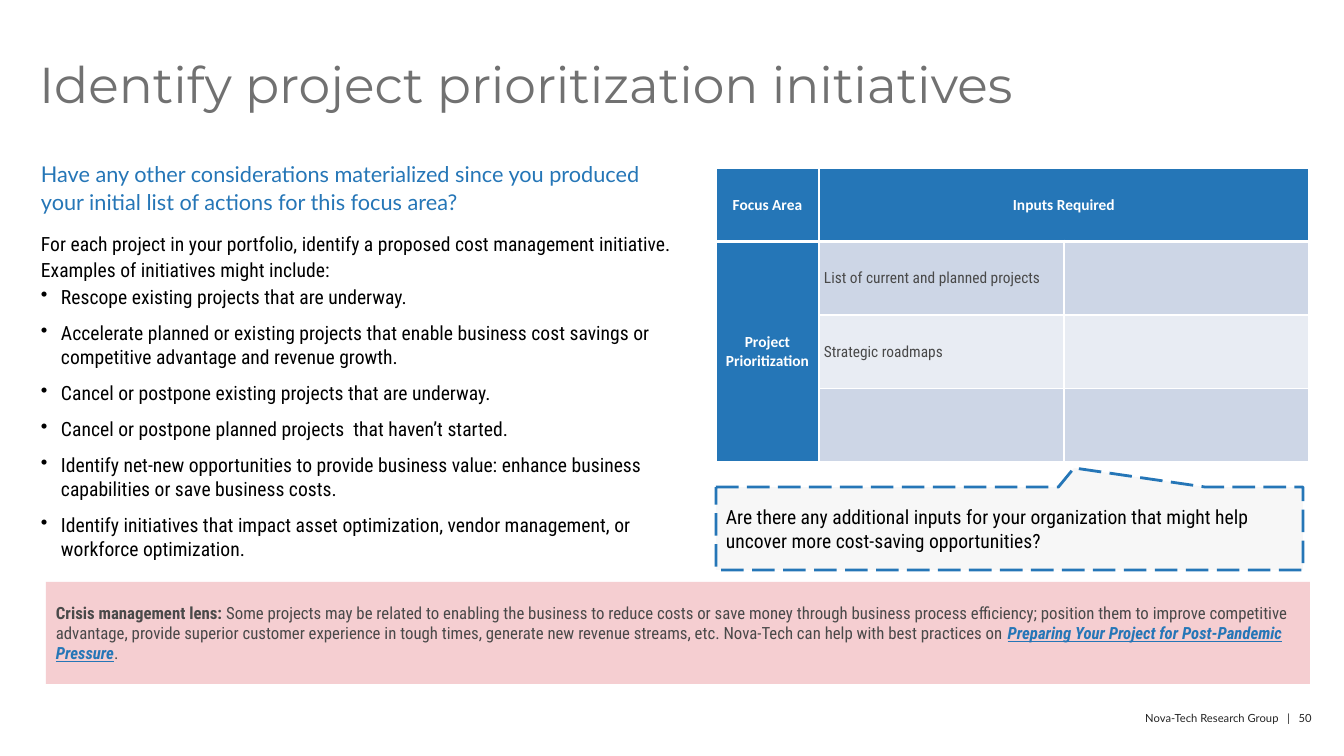
import pptx
import pptx.dml.color
import pptx.enum.dml
import pptx.enum.shapes
import pptx.enum.text
import pptx.oxml
import pptx.oxml.ns
import pptx.util

EMU_PER_PX = 914400 / 100.8
COLORS = {
    "blue": "2576B7", "title": "717171", "text": "494949", "black": "000000",
    "white": "FFFFFF", "pink": "F5CED1", "callout": "F2F2F2", "footer": "242424",
    "band": "CDD6E6", "light band": "E8ECF3",
}
ALIGN = pptx.enum.text.PP_ALIGN
MIDDLE = pptx.enum.text.MSO_ANCHOR.MIDDLE
SHAPES = pptx.enum.shapes.MSO_SHAPE

TITLE = {"name": "Montserrat", "size": 36, "color": "title"}
QUESTION = {"name": "Lato", "size": 15.5, "color": "blue"}
BODY = {"name": "Roboto Condensed", "size": 14, "color": "black"}
LENS = {"name": "Roboto Condensed", "size": 12, "color": "text"}
LENS_LABEL = {**LENS, "bold": True}
LENS_TITLE = {**LENS_LABEL, "color": "blue", "italic": True, "underline": True}
HEADER = {"name": "Calibri", "size": 11, "color": "white", "bold": True}
INPUT = {"name": "Roboto Condensed", "size": 11, "color": "text", "bold": False}
FOOTER = {"name": "Lato", "size": 8, "color": "footer"}

INITIATIVES = [
    "Rescope existing projects that are underway.",
    "Accelerate planned or existing projects that enable business cost savings or "
    "competitive advantage and revenue growth.",
    "Cancel or postpone existing projects that are underway.",
    "Cancel or postpone planned projects  that haven’t started.",
    "Identify net-new opportunities to provide business value: enhance business "
    "capabilities or save business costs.",
    "Identify initiatives that impact asset optimization, vendor management, or "
    "workforce optimization.",
]
INPUTS = ["List of current and planned projects", "Strategic roadmaps", ""]


def px(length):
    """Turn pixels into EMU."""
    return round(length * EMU_PER_PX)


def rgb(color):
    """Look up a named colour."""
    return pptx.dml.color.RGBColor.from_string(COLORS[color])


def set_values(target, values):
    """Set each attribute of the target from a dict."""
    for attribute, value in values.items():
        setattr(target, attribute, value)


def add_run(paragraph, text, style):
    """Append a run in the given style."""
    run = paragraph.add_run()
    run.text = text
    values = {**style, "size": pptx.util.Pt(style["size"])}
    run.font.color.rgb = rgb(values.pop("color"))
    set_values(run.font, values)


def add_paragraph(frame, text, style, **layout):
    """Fill the empty first paragraph, or append another one."""
    first = frame.paragraphs[0]
    paragraph = frame.add_paragraph() if first.runs else first
    set_values(paragraph, layout)
    add_run(paragraph, text, style)
    return paragraph


def add_bullet(paragraph, indent):
    """Give the paragraph a hanging bullet."""
    properties = paragraph._p.get_or_add_pPr()
    properties.set("marL", str(px(indent)))
    properties.set("indent", str(-px(indent)))
    bullet = pptx.oxml.ns.qn("a:buChar")
    properties.append(properties.makeelement(bullet, {"char": "•"}))


def add_text_frame(slide, box):
    """Add a wrapping text box without insets."""
    frame = slide.shapes.add_textbox(*map(px, box)).text_frame
    set_values(frame, {"word_wrap": True, "margin_left": 0, "margin_right": 0,
                       "margin_top": 0, "margin_bottom": 0})
    return frame


def add_panel(slide, kind, box, fill):
    """Add a flat filled shape for left-aligned text."""
    panel = slide.shapes.add_shape(kind, *map(px, box))
    panel.shadow.inherit = False
    panel.fill.solid()
    panel.fill.fore_color.rgb = rgb(fill)
    panel.line.fill.background()
    set_values(panel.text_frame, {"word_wrap": True, "vertical_anchor": MIDDLE})
    return panel


def draw_title(slide, box):
    """Draw the slide title."""
    add_paragraph(add_text_frame(slide, box), "Identify project prioritization initiatives",
                  TITLE, line_spacing=0.9)


def draw_initiatives(slide, box):
    """Draw the question, its introduction and the bulleted initiatives."""
    frame = add_text_frame(slide, box)
    add_paragraph(frame, "Have any other considerations materialized since you produced "
                  "your initial list of actions for this focus area?", QUESTION, line_spacing=1.1)
    add_paragraph(frame, "For each project in your portfolio, identify a proposed cost "
                  "management initiative. Examples of initiatives might include:", BODY,
                  line_spacing=1.1, space_before=pptx.util.Pt(10))
    for initiative in INITIATIVES:
        paragraph = add_paragraph(frame, initiative, BODY, space_before=pptx.util.Pt(3),
                                  space_after=pptx.util.Pt(6))
        add_bullet(paragraph, 20)


def format_cell(cell, fill, bottom_width):
    """Fill a table cell and draw its white borders."""
    cell.fill.solid()
    cell.fill.fore_color.rgb = rgb(fill)
    properties = cell._tc.get_or_add_tcPr()
    widths = {"lnL": 1, "lnR": 1, "lnT": 1, "lnB": bottom_width}
    for position, (side, width) in enumerate(widths.items()):
        properties.insert(position, pptx.oxml.parse_xml(
            f'<a:{side} {pptx.oxml.ns.nsdecls("a")} w="{pptx.util.Pt(width)}"><a:solidFill>'
            f'<a:srgbClr val="{COLORS["white"]}"/></a:solidFill></a:{side}>'))


def write_cell(cell, text, style, align, side_margin, end_margin):
    """Write vertically centred text in a table cell."""
    set_values(cell, {"vertical_anchor": MIDDLE, "margin_left": px(side_margin),
                      "margin_right": px(side_margin), "margin_top": px(end_margin),
                      "margin_bottom": px(end_margin)})
    add_paragraph(cell.text_frame, text, style, alignment=align)


def draw_inputs_table(slide, box):
    """Draw the table of inputs for the focus area."""
    left, top, width, height = box
    row_count, focus_width = len(INPUTS) + 1, 103
    table = slide.shapes.add_table(row_count, 3, *map(px, box)).table
    input_width = (width - focus_width) // 2
    for column, column_width in zip(table.columns, [focus_width, input_width, input_width]):
        column.width = px(column_width)
    for row_number, row in enumerate(table.rows):
        row.height = px(height / row_count)
        for column_number, cell in enumerate(row.cells):
            is_header = row_number == 0 or column_number == 0
            band = "band" if row_number % 2 else "light band"
            format_cell(cell, "blue" if is_header else band, 1 if row_number else 3)
    table.cell(0, 1).merge(table.cell(0, 2))
    table.cell(1, 0).merge(table.cell(row_count - 1, 0))
    headers = {(0, 0): "Focus Area", (0, 1): "Inputs Required",
               (1, 0): "Project Prioritization"}
    for position, header in headers.items():
        write_cell(table.cell(*position), header, HEADER, ALIGN.CENTER, 7, 0)
    for row_number, text in enumerate(INPUTS, 1):
        if text:
            write_cell(table.cell(row_number, 1), text, INPUT, ALIGN.LEFT, 5, 5)


def draw_callout(slide, box):
    """Draw the dashed callout that points at the table."""
    callout = add_panel(slide, SHAPES.RECTANGULAR_CALLOUT, box, "callout")
    callout.adjustments[0], callout.adjustments[1] = 0.11, -0.73
    fill_color = callout._element.spPr.find(".//" + pptx.oxml.ns.qn("a:srgbClr"))
    alpha = pptx.oxml.ns.qn("a:alpha")
    fill_color.append(fill_color.makeelement(alpha, {"val": "54000"}))
    callout.line.color.rgb = rgb("blue")
    set_values(callout.line, {"width": pptx.util.Pt(2),
                              "dash_style": pptx.enum.dml.MSO_LINE.LONG_DASH})
    add_paragraph(callout.text_frame, "Are there any additional inputs for your organization "
                  "that might help uncover more cost-saving opportunities?", BODY,
                  alignment=ALIGN.LEFT)


def draw_crisis_lens(slide, box):
    """Draw the crisis management note."""
    panel = add_panel(slide, SHAPES.RECTANGLE, box, "pink")
    paragraph = add_paragraph(panel.text_frame, "Crisis management lens:", LENS_LABEL,
                              alignment=ALIGN.LEFT)
    add_run(paragraph, " Some projects may be related to enabling the business to reduce costs "
            "or save money through business process efficiency; position them to improve "
            "competitive advantage, provide superior customer experience in tough times, "
            "generate new revenue streams, etc. Nova-Tech can help with best practices on ", LENS)
    add_run(paragraph, "Preparing Your Project for Post-Pandemic Pressure", LENS_TITLE)
    add_run(paragraph, ".", LENS)


def draw_footer(slide, box):
    """Draw the publisher and page number."""
    add_paragraph(add_text_frame(slide, box), "Nova-Tech Research Group   |   50", FOOTER,
                  alignment=ALIGN.RIGHT)


def main():
    """Build and save the slide."""
    deck = pptx.Presentation()
    set_values(deck, {"slide_width": px(1344), "slide_height": px(756)})
    slide = deck.slides.add_slide(deck.slide_layouts[6])
    draw_footer(slide, (970, 711, 342, 13))
    draw_title(slide, (39, 60, 1264, 125))
    draw_initiatives(slide, (41, 158, 640, 331))
    draw_crisis_lens(slide, (46, 582, 1264, 102))
    draw_inputs_table(slide, (716, 168, 593, 294))
    draw_callout(slide, (716, 487, 587, 83))
    deck.save("out.pptx")


if __name__ == "__main__":
    main()
